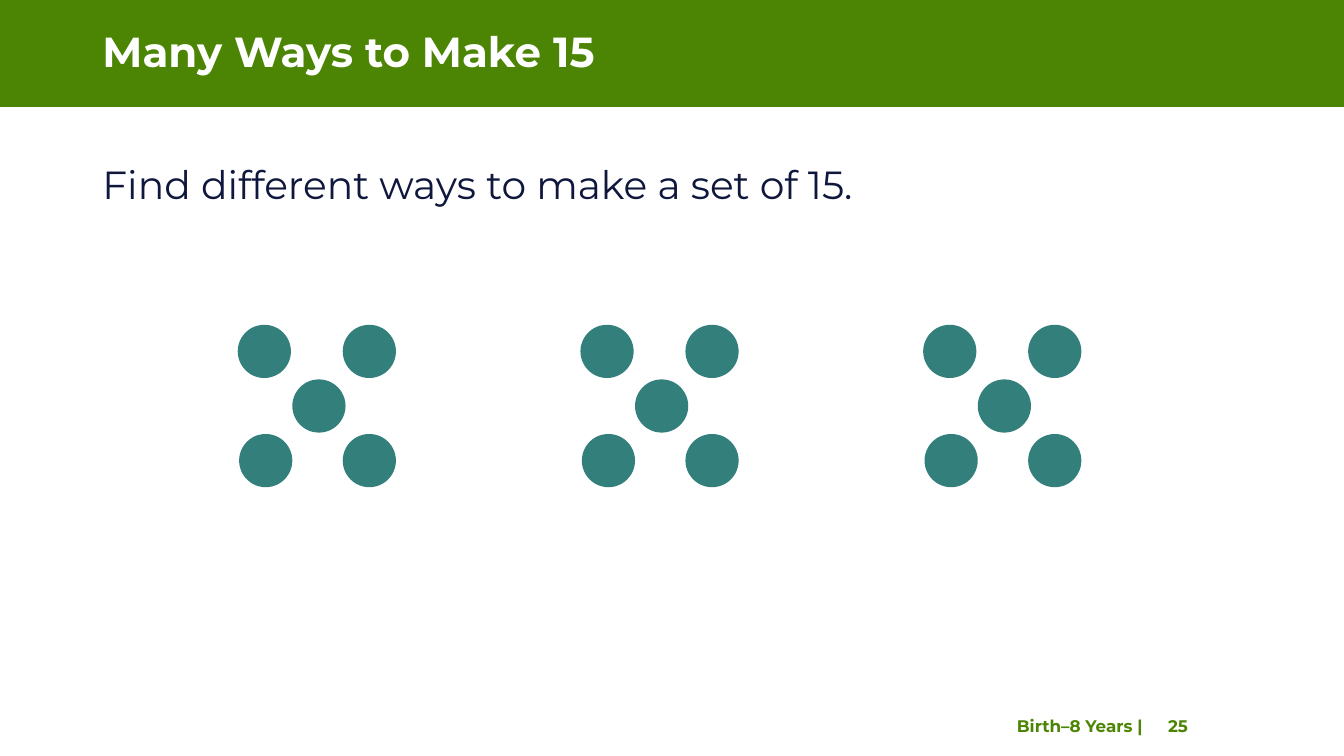
from pptx import Presentation
from pptx.dml.color import RGBColor
from pptx.enum.shapes import MSO_SHAPE
from pptx.enum.text import MSO_ANCHOR, MSO_AUTO_SIZE, PP_ALIGN
from pptx.oxml.ns import qn
from pptx.util import Pt
from lxml.etree import SubElement

GREEN, WHITE, NAVY, TEAL = "4C8503", "FFFFFF", "0F173D", "327F7C"


def color(code):
    return RGBColor.from_string(code)


class Deck:
    """Holds the style and the current slide."""

    face = "Montserrat"

    def __init__(self, wide, high):
        self.show = Presentation()
        self.show.slide_width, self.show.slide_height = Pt(wide), Pt(high)
        self.slide = self.show.slides.add_slide(self.show.slide_layouts[1])
        self.shapes = self.slide.shapes

    def place(self, shape, box):
        for name, value in zip(("left", "top", "width", "height"), box):
            setattr(shape, name, Pt(value))

    def letter(self, shape, text, size, code, bold=False, space=1.0, tabs=(),
               anchor=MSO_ANCHOR.MIDDLE):
        frame = shape.text_frame
        frame.text = text
        form = {"word_wrap": True, "auto_size": MSO_AUTO_SIZE.NONE,
                "vertical_anchor": anchor}
        for name, value in form.items():
            setattr(frame, name, value)
        line = frame.paragraphs[0]
        line.alignment, line.line_spacing = PP_ALIGN.LEFT, space
        line.space_before = Pt(0)
        # Flush left, no bullet, optional tab stops
        props = line._p.get_or_add_pPr()
        props.set("marL", "0")
        props.set("indent", "0")
        SubElement(props, qn("a:buNone"))
        if tabs:
            stops = SubElement(props, qn("a:tabLst"))
            for stop in tabs:
                SubElement(stops, qn("a:tab"), pos=str(Pt(stop)), algn="l")
        font = line.runs[0].font
        for name, value in {"name": self.face, "size": Pt(size), "bold": bold}.items():
            setattr(font, name, value)
        font.color.rgb = color(code)

    def holder(self, index, box, text, size, code, **form):
        shape = self.slide.placeholders[index]
        self.place(shape, box)
        self.letter(shape, text, size, code, **form)

    def label(self, box, text, size, code, **form):
        shape = self.shapes.add_textbox(*map(Pt, box))
        self.letter(shape, text, size, code, **form)
        shape.text_frame.margin_right = 0

    def solid(self, kind, box, code, parent=None):
        shape = (parent or self.shapes).add_shape(kind, *map(Pt, box))
        shape.shadow.inherit = False
        shape.fill.solid()
        shape.fill.fore_color.rgb = color(code)
        shape.line.fill.background()
        return shape

    def band(self, box, code):
        shape = self.solid(MSO_SHAPE.RECTANGLE, box, code)
        self.shapes._spTree.insert(2, shape._element)  # behind the title

    def dots(self, left, top, spots, size, code):
        group = self.shapes.add_group_shape().shapes
        for x, y in spots:
            # An empty group counts as false, so it is tested by length elsewhere
            self.dot(group, (left + x, top + y, size, size), code)

    def dot(self, group, box, code):
        shape = group.add_shape(MSO_SHAPE.OVAL, *map(Pt, box))
        shape.shadow.inherit = False
        shape.fill.solid()
        shape.fill.fore_color.rgb = color(code)
        shape.line.fill.background()


def main():
    deck = Deck(960, 540)

    # Header band and title
    deck.band((0, 0, 960, 76.3), GREEN)
    deck.holder(0, (66, 18.7, 894, 40.3), "Many Ways to Make 15", 30, WHITE,
                bold=True, space=0.9)

    # Task
    deck.holder(1, (66, 104.4, 754.6, 98.6), "Find different ways to make a set of 15.",
                28, NAVY, space=1.2, anchor=MSO_ANCHOR.TOP)

    # Three sets of five dots
    spots = [(0, 0), (75, 0), (75, 78), (1, 78), (39, 39)]
    for col in range(3):
        deck.dots(169.8 + col * 244.8, 232, spots, 38, TEAL)

    # Footer
    deck.label((683.3, 504, 274.3, 28.8), "\tBirth–8 Years |\t25", 12, GREEN,
               bold=True, tabs=(138.4, 244.8))

    deck.show.save("out.pptx")


if __name__ == "__main__":
    main()
